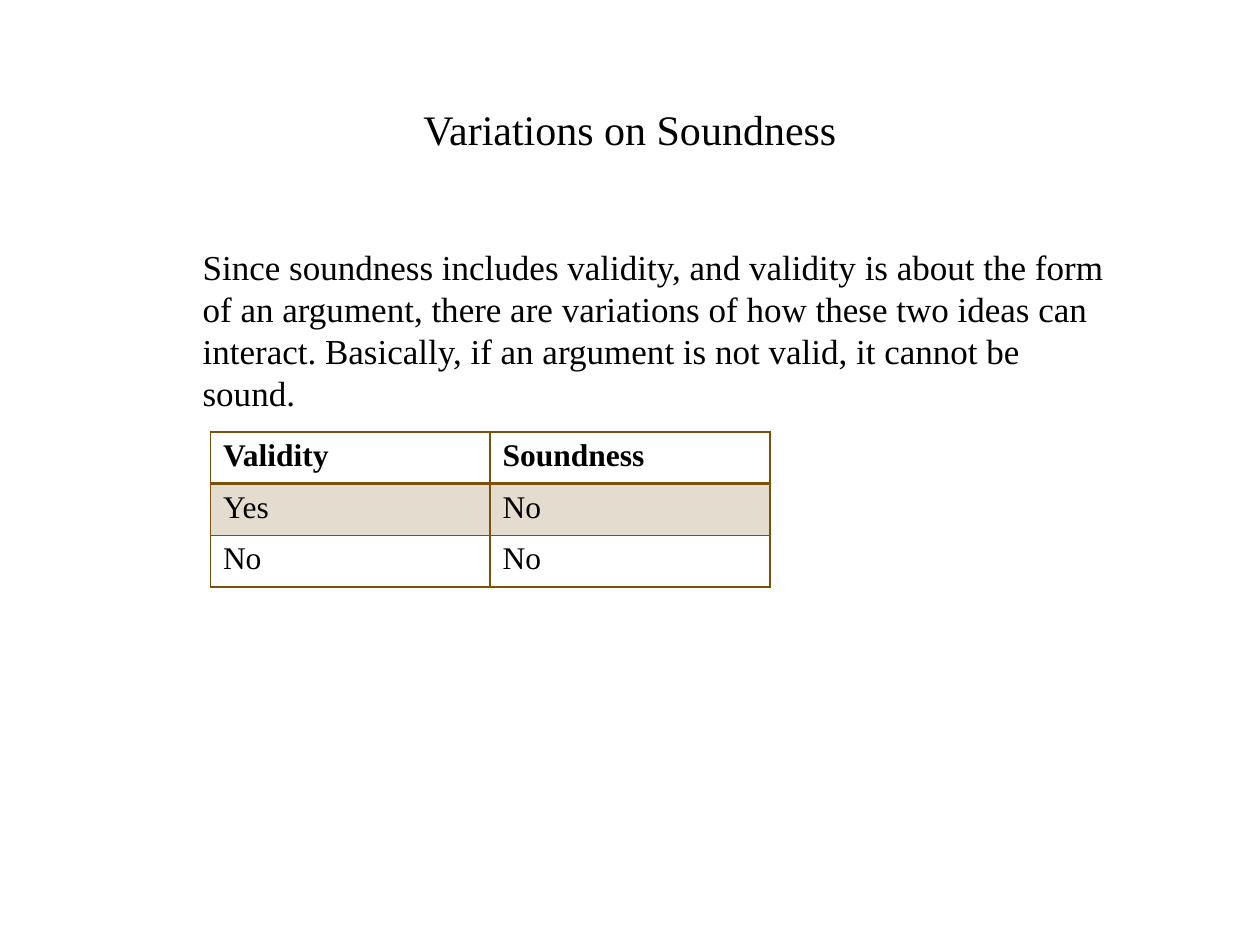
from lxml.etree import SubElement
from pptx import Presentation
from pptx.dml.color import RGBColor
from pptx.enum.text import MSO_ANCHOR, PP_ALIGN
from pptx.oxml.ns import qn
from pptx.util import Inches, Pt

BROWN = "7A500A"


def color(value):
    return RGBColor.from_string(value)


def write(frame, text, size, bold=False):
    para = frame.paragraphs[0]
    span = para.add_run()
    span.text = text
    look = {"name": "Times New Roman", "size": Pt(size), "bold": bold}
    for name, value in look.items():
        setattr(span.font, name, value)
    span.font.color.rgb = color("000000")
    return para


deck = Presentation()
deck.slide_width, deck.slide_height = Inches(10), Inches(7.5)
page = deck.slides.add_slide(deck.slide_layouts[6])
margin = deck.slide_width // 10
text_width = deck.slide_width - 2 * margin

# Title
title = page.shapes.add_textbox(margin, Inches(0.55), text_width, Inches(0.95)).text_frame
for name, value in {"word_wrap": True, "vertical_anchor": MSO_ANCHOR.MIDDLE}.items():
    setattr(title, name, value)
write(title, "Variations on Soundness", 24).alignment = PP_ALIGN.CENTER

# Indented explanation
body = page.shapes.add_textbox(margin, Inches(1.9), text_width, Inches(4.44)).text_frame
body.word_wrap = True
para = write(
    body,
    "Since soundness includes validity, and validity is about the form of an "
    "argument, there are variations of how these two ideas can interact. "
    "Basically, if an argument is not valid, it cannot be sound.",
    20,
)
para._p.get_or_add_pPr().set("marL", str(Inches(0.51)))

# Table of combinations
rows = [("Validity", "Soundness"), ("Yes", "No"), ("No", "No")]
column_width, row_height = Inches(2.22), Inches(0.41)
table = page.shapes.add_table(
    len(rows), 2, Inches(1.67), Inches(3.43), 2 * column_width, len(rows) * row_height
).table
table.horz_banding = False

for r, row in enumerate(rows):
    for c, text in enumerate(row):
        cell = table.cell(r, c)
        write(cell.text_frame, text, 18, bold=r == 0)

        # Borders, with a heavier rule under the header
        properties = cell._tc.get_or_add_tcPr()
        for side in ("lnL", "lnR", "lnT", "lnB"):
            heavy = (r, side) in ((0, "lnB"), (1, "lnT"))
            line = SubElement(properties, qn(f"a:{side}"), w=str(Pt(2 if heavy else 1)))
            paint = SubElement(line, qn("a:solidFill"))
            SubElement(paint, qn("a:srgbClr"), val=BROWN)

        # Tint of the first data row
        if r == 1:
            cell.fill.solid()
            cell.fill.fore_color.rgb = color(BROWN)
            tint = properties.find(qn("a:solidFill")).find(qn("a:srgbClr"))
            SubElement(tint, qn("a:alpha"), val="20000")
        else:
            cell.fill.background()

deck.save("out.pptx")
